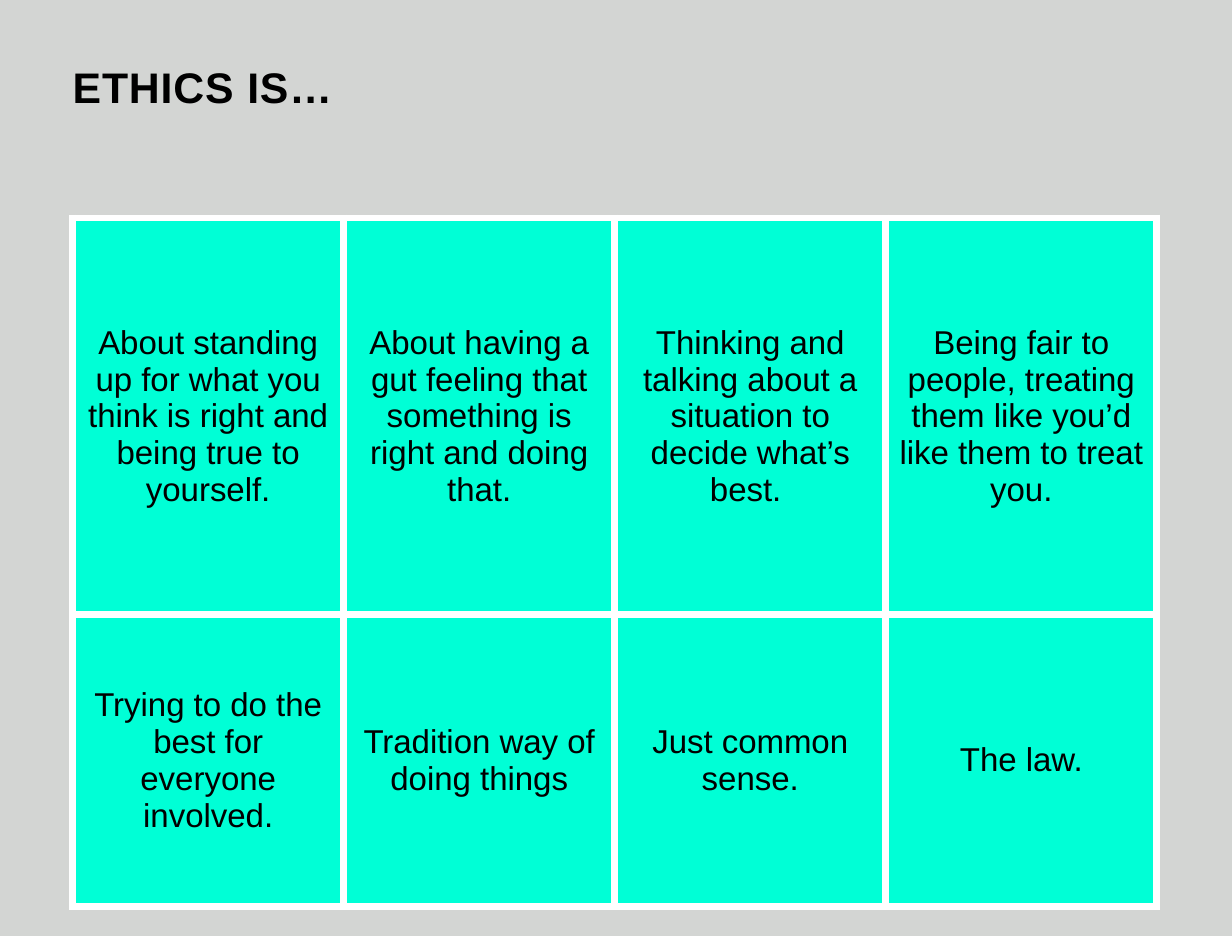
from pptx import Presentation
from pptx.dml.color import RGBColor
from pptx.enum.text import MSO_ANCHOR, MSO_AUTO_SIZE, PP_ALIGN
from pptx.oxml import parse_xml
from pptx.oxml.ns import nsdecls
from pptx.util import Emu, Pt

EMU_PER_PX = 4500  # 8 px to the millimetre
GREY = RGBColor(0xD3, 0xD5, 0xD3)
TURQUOISE = RGBColor(0x00, 0xFF, 0xD6)
WHITE = RGBColor(0xFF, 0xFF, 0xFF)
BLACK = RGBColor(0x00, 0x00, 0x00)

STATEMENTS = [
    ["About standing up for what you think is right and being true to yourself.",
     "About having a gut feeling that something is right and doing that.",
     "Thinking and talking about a situation to decide what’s best. ",
     "Being fair to people, treating them like you’d like them to treat you."],
    ["Trying to do the best for everyone involved.",
     "Tradition way of doing things",
     "Just common sense.",
     "The law."],
]


def px(n):
    return Emu(n * EMU_PER_PX)


class Deck:
    font = "Arial"

    def __init__(self, width, height):
        self.prs = Presentation()
        self.prs.slide_width, self.prs.slide_height = px(width), px(height)
        self.s = None

    def slide(self, color):
        self.s = self.prs.slides.add_slide(self.prs.slide_layouts[5])
        self.s.background.fill.solid()
        self.s.background.fill.fore_color.rgb = color

    def run(self, p, text, size, bold=False):
        r = p.add_run()
        r.text = text
        r.font.name, r.font.size, r.font.bold = self.font, Pt(size), bold
        r.font.color.rgb = BLACK
        return r

    def title(self, text, left, top, width, height):
        sp = self.s.shapes.title
        sp.left, sp.top, sp.width, sp.height = map(px, (left, top, width, height))
        tf = sp.text_frame
        tf.margin_left = tf.margin_right = tf.margin_top = tf.margin_bottom = 0
        tf.word_wrap, tf.auto_size = True, MSO_AUTO_SIZE.NONE
        tf.vertical_anchor = MSO_ANCHOR.TOP
        p = tf.paragraphs[0]
        p.alignment = PP_ALIGN.LEFT
        r = self.run(p, text, 24.6, bold=True)
        r.font._element.set("spc", "50")

    def borders(self, cell, color, width):
        tc_pr = cell._tc.get_or_add_tcPr()
        for i, side in enumerate(("lnL", "lnR", "lnT", "lnB")):
            tc_pr.insert(i, parse_xml(
                f'<a:{side} {nsdecls("a")} w="{Pt(width)}"><a:solidFill>'
                f'<a:srgbClr val="{color}"/></a:solidFill></a:{side}>'))

    def table(self, rows, left, top, col_width, row_heights):
        cols = len(rows[0])
        table = self.s.shapes.add_table(
            len(rows), cols, px(left), px(top),
            px(cols * col_width), px(sum(row_heights))).table
        table.first_row = table.horz_banding = False
        for col in table.columns:
            col.width = px(col_width)
        for i, (texts, height) in enumerate(zip(rows, row_heights)):
            table.rows[i].height = px(height)
            for j, text in enumerate(texts):
                cell = table.cell(i, j)
                cell.fill.solid()
                cell.fill.fore_color.rgb = TURQUOISE
                cell.vertical_anchor = MSO_ANCHOR.MIDDLE
                self.borders(cell, WHITE, 4.5)
                p = cell.text_frame.paragraphs[0]
                p.alignment = PP_ALIGN.CENTER
                self.run(p, text, 19)


def main():
    deck = Deck(2000, 1520)
    deck.slide(GREY)
    deck.title("ETHICS IS…", 118, 98, 1760, 150)
    deck.table(STATEMENTS, 118, 354, 440, (644, 474))
    deck.prs.save("out.pptx")


if __name__ == "__main__":
    main()
